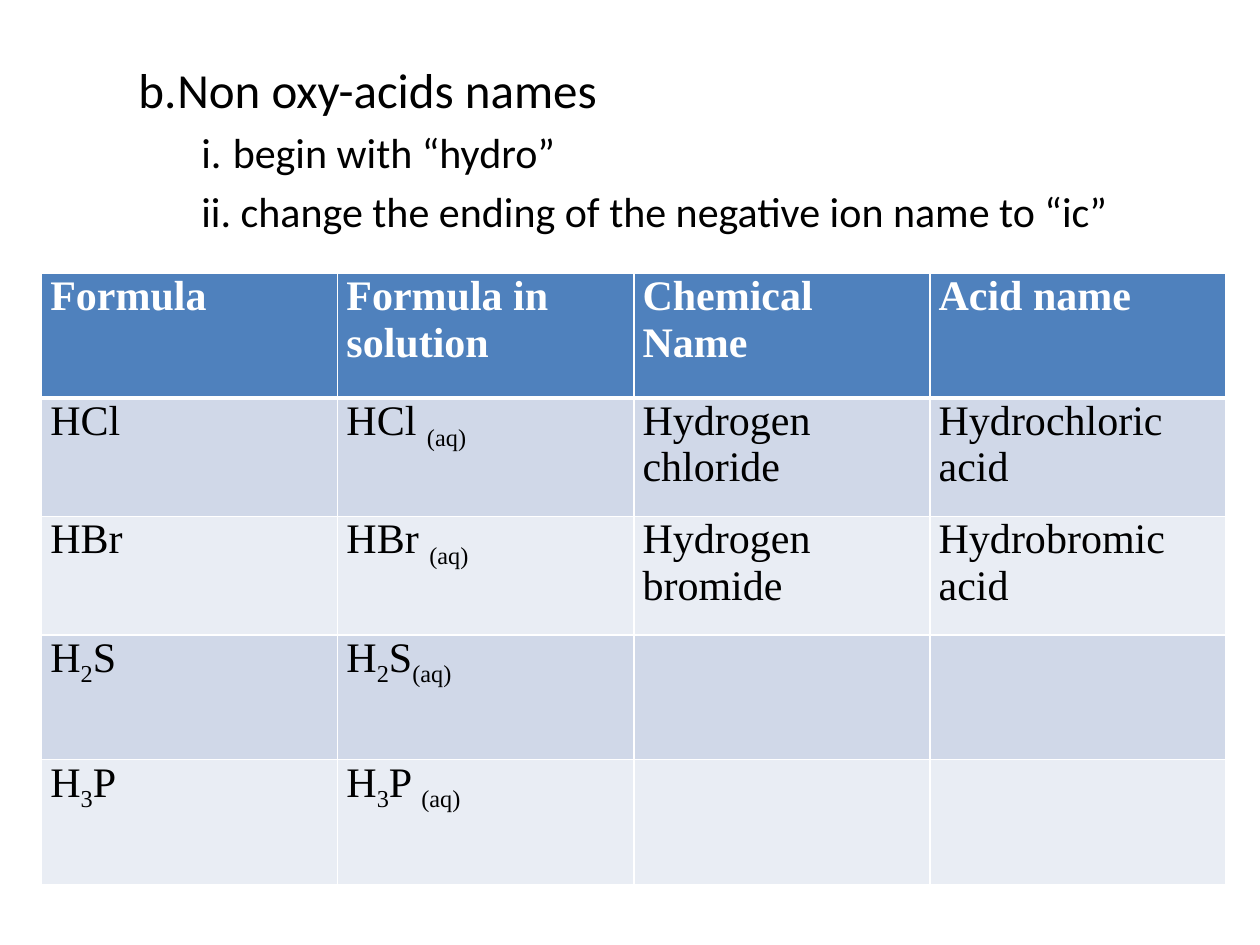
from lxml import etree
from pptx import Presentation
from pptx.dml.color import RGBColor
from pptx.oxml.ns import qn
from pptx.util import Inches, Pt

OUTLINE = [
    ("b.\tNon oxy-acids names", 28, 0.81, -0.31),
    ("i.\tbegin with “hydro”", 24, 1.25, -0.25),
    ("ii. change the ending of the negative ion name to “ic”", 24, 1.25, -0.25),
]
SUBSCRIPT_MARK = "_"
ACIDS = [
    ["Formula", "Formula in solution", "Chemical Name", "Acid name"],
    ["HCl", "HCl _(aq)_", "Hydrogen chloride", "Hydrochloric acid"],
    ["HBr", "HBr _(aq)_", "Hydrogen bromide", "Hydrobromic acid"],
    ["H_2_S", "H_2_S_(aq)_", "", ""],
    ["H_3_P", "H_3_P _(aq)_", "", ""],
]
ROW_HEIGHTS = [0.99, 0.94, 0.94, 0.99, 0.99]
COLUMN_WIDTH = 2.35
HEADER_FILL = "4F81BD"
BAND_FILLS = ["E9EDF4", "D0D8E8"]
WHITE, BLACK = "FFFFFF", "000000"


def color(value):
    return RGBColor.from_string(value)


def format_font(font, name, size, value, bold=False):
    font.name, font.size, font.bold = name, Pt(size), bold
    font.color.rgb = color(value)


def add_outline(slide):
    box = slide.shapes.add_textbox(Inches(0.5), Inches(0.42), Inches(9), Inches(1.58))
    frame = box.text_frame
    frame.word_wrap = True
    frame.text = "\n".join(text for text, *_ in OUTLINE)
    for paragraph, (_, size, margin, indent) in zip(frame.paragraphs, OUTLINE):
        paragraph.space_before = Pt(size * 0.2)
        properties = paragraph._p.get_or_add_pPr()
        properties.set("marL", str(Inches(margin)))
        properties.set("indent", str(Inches(indent)))
        format_font(paragraph.runs[0].font, "Calibri", size, BLACK)


def add_borders(cell, bottom_width):
    properties = cell._tc.get_or_add_tcPr()
    for side, width in (("L", 1), ("R", 1), ("T", 1), ("B", bottom_width)):
        line = etree.SubElement(properties, qn(f"a:ln{side}"), w=str(Pt(width)))
        fill = etree.SubElement(line, qn("a:solidFill"))
        etree.SubElement(fill, qn("a:srgbClr"), val=WHITE)


def fill_cell(cell, text, row):
    is_header = row == 0
    add_borders(cell, 3 if is_header else 1)
    cell.fill.solid()
    cell.fill.fore_color.rgb = color(HEADER_FILL if is_header else BAND_FILLS[row % 2])
    cell.margin_left = cell.margin_right = Inches(0.07)
    cell.margin_top = cell.margin_bottom = 0
    paragraph = cell.text_frame.paragraphs[0]
    for index, part in enumerate(text.split(SUBSCRIPT_MARK)):
        if part:
            run = paragraph.add_run()
            run.text = part
            format_font(run.font, "Times New Roman", 24, WHITE if is_header else BLACK, is_header)
            if index % 2:
                run.font._element.set("baseline", "-25000")


def add_acid_table(slide):
    column_count = len(ACIDS[0])
    table = slide.shapes.add_table(
        len(ACIDS), column_count, Inches(0.33), Inches(2.17),
        Inches(COLUMN_WIDTH * column_count), Inches(sum(ROW_HEIGHTS)),
    ).table
    for column in table.columns:
        column.width = Inches(COLUMN_WIDTH)
    for row, (texts, height) in enumerate(zip(ACIDS, ROW_HEIGHTS)):
        table.rows[row].height = Inches(height)
        for column, text in enumerate(texts):
            fill_cell(table.cell(row, column), text, row)


def main():
    """Build the slide on naming acids without oxygen."""
    presentation = Presentation()
    presentation.slide_width, presentation.slide_height = Inches(10), Inches(7.5)
    slide = presentation.slides.add_slide(presentation.slide_layouts[6])
    add_outline(slide)
    add_acid_table(slide)
    presentation.save("out.pptx")


if __name__ == "__main__":
    main()
